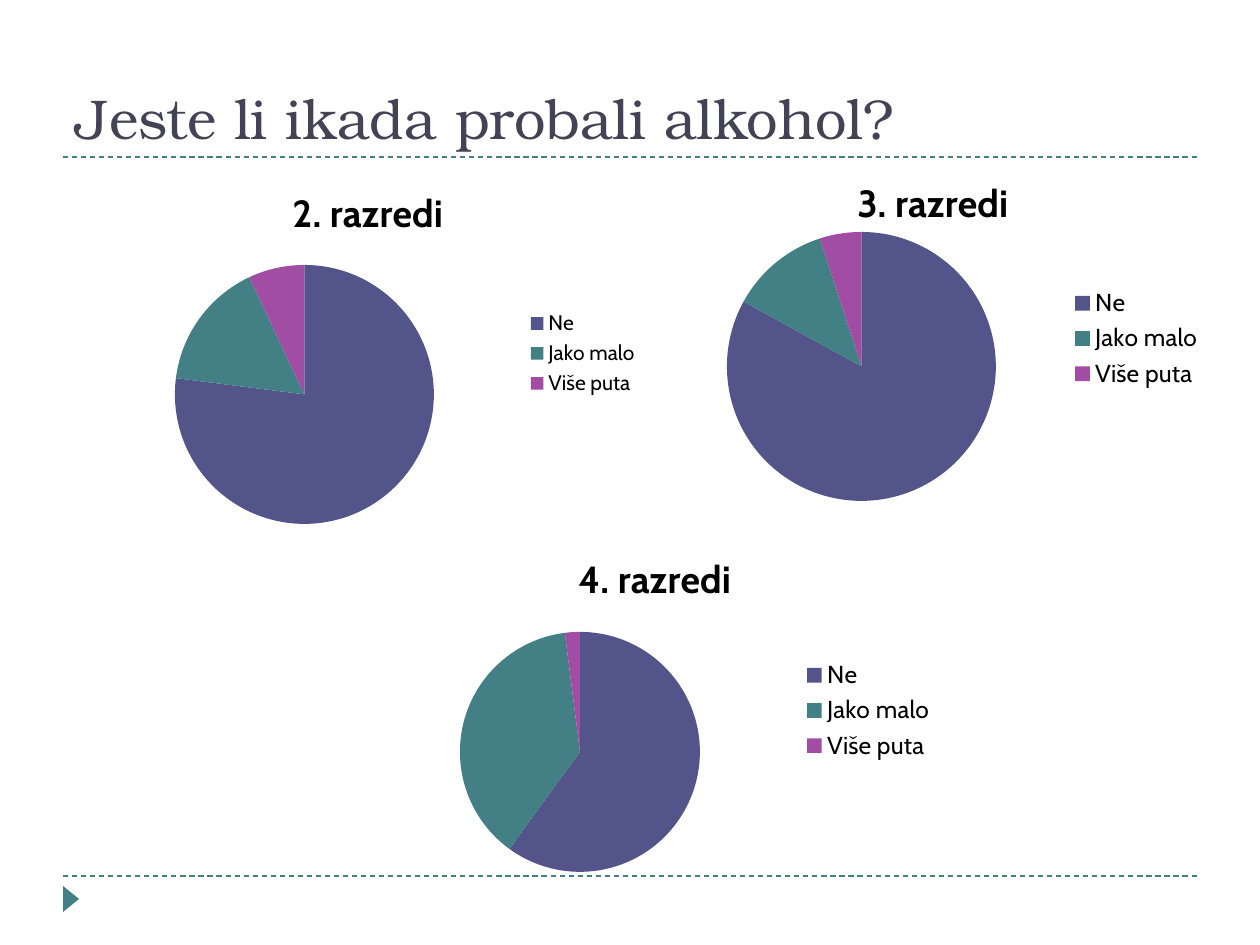
from lxml.etree import SubElement
from pptx import Presentation
from pptx.chart.data import CategoryChartData
from pptx.dml.color import RGBColor
from pptx.enum.chart import XL_CHART_TYPE as ChartType, XL_LEGEND_POSITION as LegendPosition
from pptx.enum.dml import MSO_LINE_DASH_STYLE as Dash
from pptx.enum.shapes import MSO_CONNECTOR as Connector, MSO_SHAPE as Shape
from pptx.enum.text import MSO_ANCHOR as Anchor, MSO_AUTO_SIZE as AutoSize, PP_ALIGN as Align
from pptx.oxml import parse_xml
from pptx.oxml.ns import nsdecls, qn
from pptx.util import Emu, Pt

INDIGO = RGBColor(0x53, 0x54, 0x8A)
TEAL = RGBColor(0x43, 0x80, 0x86)
PURPLE = RGBColor(0xA0, 0x4D, 0xA3)
SLATE = RGBColor(0x42, 0x44, 0x56)
BLACK = RGBColor(0, 0, 0)
HEADING_FONT, BODY_FONT = "TeX Gyre Bonum", "Cabin"

TITLE = "Jeste li ikada probali alkohol?"
ANSWERS = {"Ne": INDIGO, "Jako malo": TEAL, "Više puta": PURPLE}
# frame: left, top, width, height; pie: left, top, diameter (px on the page)
CHARTS = [
    {"name": "3. razredi", "values": (83, 12, 5), "legend_size": 14,
     "frame": (650, 155, 566, 367), "pie": (727, 232, 269)},
    {"name": "4. razredi", "values": (60, 38, 2), "legend_size": 14,
     "frame": (362, 532, 586, 357), "pie": (460, 632, 240)},
    {"name": "2. razredi", "values": (77, 16, 7), "legend_size": 12,
     "frame": (84, 165, 568, 377), "pie": (175, 265, 259)},
]
MARGIN_LEFT, MARGIN_RIGHT = 63, 1197
RULES_Y = (876, 157)


def px(*lengths):
    """Turn pixel lengths into EMU."""
    return [Emu(round(length * 914400 / 126)) for length in lengths]


def write(frame, text, font, size, color, bold=False, align=None):
    para = frame.paragraphs[0]
    para.alignment = align
    span = para.add_run()
    span.text = text
    span.font.name, span.font.size, span.font.bold = font, Pt(size), bold
    span.font.color.rgb = color


def add_rule(page, y):
    rule = page.shapes.add_connector(
        Connector.STRAIGHT, *px(MARGIN_LEFT, y, MARGIN_RIGHT, y))
    rule.line.color.rgb = TEAL
    rule.line.width = Pt(0.75)
    rule.line.dash_style = Dash.DASH
    SubElement(rule._element.spPr, qn("a:effectLst"))


def place_pie(chart, frame, pie):
    """Fix the plot area to the square around the pie."""
    left, top, width, height = frame
    pie_left, pie_top, diameter = pie
    shares = {"x": (pie_left - left) / width, "y": (pie_top - top) / height,
              "w": diameter / width, "h": diameter / height}
    parts = "".join(f'<c:{key} val="{share:.4f}"/>' for key, share in shares.items())
    layout = parse_xml(
        f'<c:layout {nsdecls("c")}><c:manualLayout><c:layoutTarget val="inner"/>'
        f'<c:xMode val="edge"/><c:yMode val="edge"/>{parts}</c:manualLayout></c:layout>')
    plot_area = chart._chartSpace.chart.plotArea
    for old in plot_area.findall(qn("c:layout")):
        plot_area.remove(old)
    plot_area.insert(0, layout)


def add_pie(page, name, values, legend_size, frame, pie):
    data = CategoryChartData()
    data.categories = list(ANSWERS)
    data.add_series(name, values)
    chart = page.shapes.add_chart(ChartType.PIE, *px(*frame), data).chart
    chart.font.name, chart.font.size = BODY_FONT, Pt(18)
    chart.font.color.rgb = BLACK
    chart.has_title = True
    write(chart.chart_title.text_frame, name, BODY_FONT, 21.6, BLACK, bold=True)
    chart.chart_title.include_in_layout = False
    chart.has_legend = True
    legend = chart.legend
    legend.position = LegendPosition.RIGHT
    legend.include_in_layout = False
    legend.font.name, legend.font.size = BODY_FONT, Pt(legend_size)
    legend.font.color.rgb = BLACK
    plot = chart.plots[0]
    plot.vary_by_categories = True
    for index, color in enumerate(ANSWERS.values()):
        fill = plot.series[0].points[index].format.fill
        fill.solid()
        fill.fore_color.rgb = color
    place_pie(chart, frame, pie)


def main():
    deck = Presentation()
    deck.slide_width, deck.slide_height = px(1260, 945)
    page = deck.slides.add_slide(deck.slide_layouts[5])

    for y in RULES_Y:
        add_rule(page, y)
    marker = page.shapes.add_shape(Shape.ISOSCELES_TRIANGLE, *px(58, 891, 26, 16))
    marker.rotation = 90
    marker.shadow.inherit = False
    marker.fill.solid()
    marker.fill.fore_color.rgb = TEAL
    marker.line.fill.background()

    title = page.shapes.title
    title.left, title.top, title.width, title.height = px(63, 21, 1134, 136)
    title.text_frame.auto_size = AutoSize.NONE
    title.text_frame.word_wrap = True
    title.text_frame.vertical_anchor = Anchor.BOTTOM
    write(title.text_frame, TITLE, HEADING_FONT, 32, SLATE, align=Align.LEFT)

    for chart in CHARTS:
        add_pie(page, **chart)
    deck.save("out.pptx")


if __name__ == "__main__":
    main()
